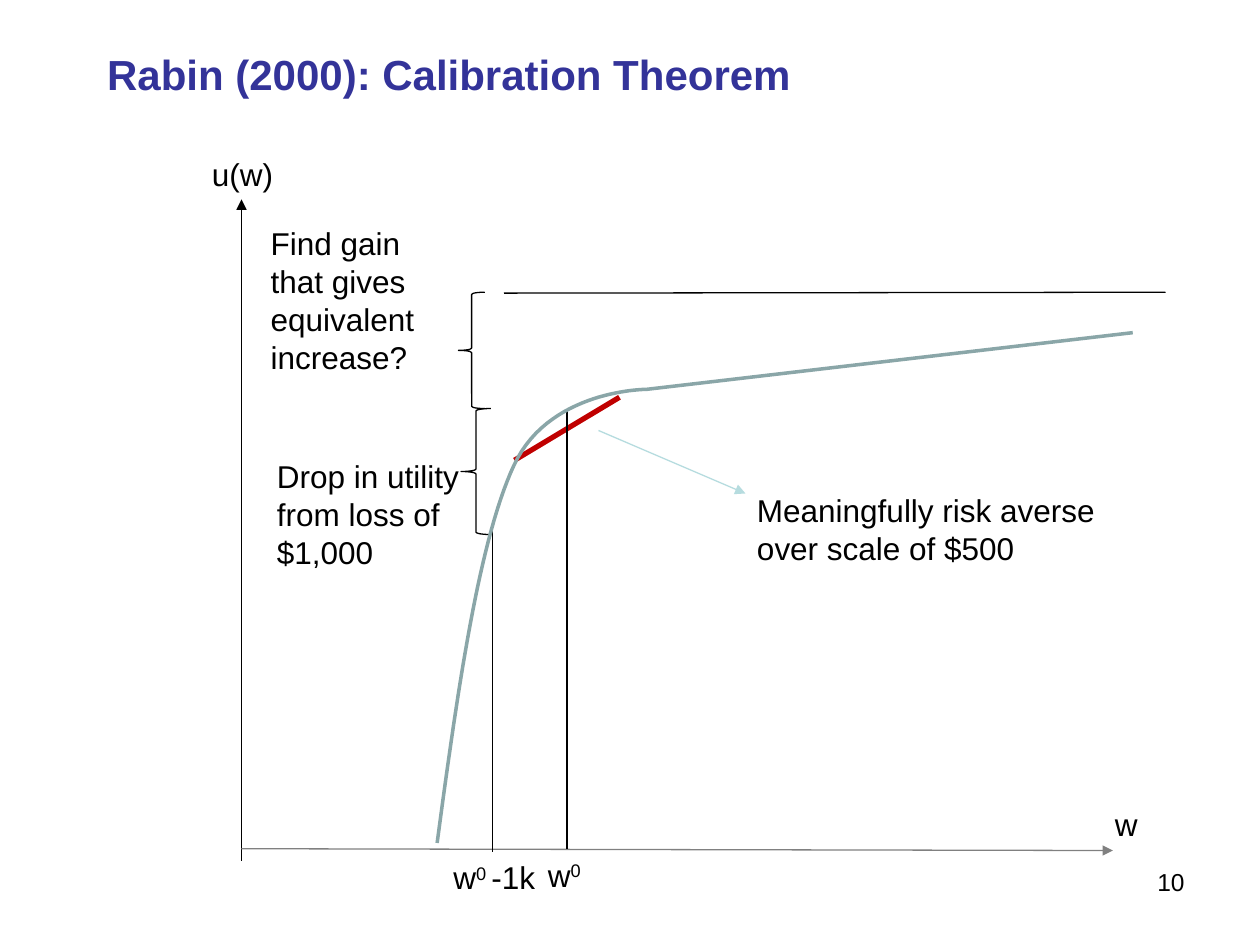
from lxml import etree
from pptx import Presentation
from pptx import util as u
from pptx.dml.color import RGBColor
from pptx.enum import shapes, text
from pptx.oxml import ns

COLORS = {
    "ink": "000000", "title": "333399", "axis": "808080",
    "chord": "C00000", "pointer": "B6DCDF", "curve": "8AA6A8",
}
FONT = "Arial"
TITLE = ("Rabin (2000): Calibration Theorem", (54, 24, 630, 90))
BODY = {"size": 18, "color": "ink"}

LABELS = [
    (["u(w)"], (114, 85, 108, 29), BODY),
    (["w"], (630, 456.5, 90, 29), BODY),
    (["w", "^0"], (306, 485.5, 108, 29), BODY),
    (["w", "^0 ", "-1k"], (252, 487, 108, 29), BODY),
    (["Drop in utility from loss of $1,000"], (151.2, 257.8, 120.2, 72.7), BODY),
    (["Meaningfully risk averse over scale of $500"], (425.5, 277.2, 228.2, 51), BODY),
    (["Find gain that gives equivalent increase?"], (147.6, 124.6, 120.2, 94.3), BODY),
    (["10"], (516, 492, 168, 37.4), {"size": 14, "color": "ink", "align": text.PP_ALIGN.RIGHT}),
]

LINES = [
    ((354, 227), (294, 263), "chord", 3, False),
    ((138, 492), (138, 114), "ink", 0.75, True),
    ((138, 485), (636, 486), "axis", 0.75, True),
    ((324, 234), (324, 485), "ink", 0.75, False),
    ((281.5, 302), (281.5, 487), "ink", 0.75, False),
    ((288, 167.5), (666, 167), "ink", 0.75, False),
    ((342, 246), (426, 282), "pointer", 0.75, True),
]

BRACES = [(263.5, 233.5, 17, 72), (262, 167, 15, 66.5)]

CURVE_START = (249.8, 481.7)
CURVE_BENDS = [
    ((261.4, 395.3), (273.6, 308.9), (293.8, 265.7)),
    ((313.9, 222.5), (369.4, 222.5), (369.4, 222.5)),
]
CURVE_END = (647.3, 190.1)
STEPS = 30


def points(values):
    return [u.Pt(value) for value in values]


def rgb(name):
    return RGBColor.from_string(COLORS[name])


def style_line(shape, color, width):
    shape.line.color.rgb = rgb(color)
    shape.line.width = u.Pt(width)


def write(shape, runs, size, color, align=text.PP_ALIGN.LEFT, bold=False):
    frame = shape.text_frame
    frame_format = {
        "word_wrap": True, "auto_size": text.MSO_AUTO_SIZE.NONE,
        "vertical_anchor": text.MSO_ANCHOR.TOP,
    }
    for name, value in frame_format.items():
        setattr(frame, name, value)
    paragraph = frame.paragraphs[0]
    paragraph.alignment = align
    for content in runs:
        run = paragraph.add_run()
        run.text = content.lstrip("^")
        for name, value in {"name": FONT, "size": u.Pt(size), "bold": bold}.items():
            setattr(run.font, name, value)
        run.font.color.rgb = rgb(color)
        if content.startswith("^"):
            run.font._element.set("baseline", "30000")


def add_line(slide, start, end, color, width, arrow):
    connector = slide.shapes.add_connector(
        shapes.MSO_CONNECTOR.STRAIGHT, *points(start + end))
    style_line(connector, color, width)
    if arrow:
        tail = etree.SubElement(connector.line._get_or_add_ln(), ns.qn("a:tailEnd"))
        tail.set("type", "triangle")
    etree.SubElement(connector._element.spPr, ns.qn("a:effectLst"))


def add_brace(slide, box):
    brace = slide.shapes.add_shape(shapes.MSO_SHAPE.LEFT_BRACE, *points(box))
    brace.shadow.inherit = False
    brace.fill.background()
    style_line(brace, "ink", 0.75)


def bend_points(start, bend):
    corners = (start, *bend)
    for step in range(1, STEPS + 1):
        t = step / STEPS
        weights = ((1 - t) ** 3, 3 * t * (1 - t) ** 2, 3 * t ** 2 * (1 - t), t ** 3)
        yield tuple(sum(weight * corner[axis] for weight, corner in zip(weights, corners))
                    for axis in (0, 1))


def add_curve(slide):
    vertices = []
    start = CURVE_START
    for bend in CURVE_BENDS:
        vertices.extend(bend_points(start, bend))
        start = bend[-1]
    vertices.append(CURVE_END)
    builder = slide.shapes.build_freeform(*points(CURVE_START))
    builder.add_line_segments([points(vertex) for vertex in vertices], close=False)
    curve = builder.convert_to_shape()
    curve.shadow.inherit = False
    curve.fill.background()
    style_line(curve, "curve", 2)


def main():
    presentation = Presentation()
    presentation.slide_width, presentation.slide_height = points((720, 540))
    slide = presentation.slides.add_slide(presentation.slide_layouts[5])

    title = slide.shapes.title
    content, box = TITLE
    for name, value in zip(("left", "top", "width", "height"), points(box)):
        setattr(title, name, value)
    write(title, [content], 24, "title", bold=True)

    for line in LINES:
        add_line(slide, *line)
    for brace in BRACES:
        add_brace(slide, brace)
    for runs, box, style in LABELS:
        write(slide.shapes.add_textbox(*points(box)), runs, **style)
    add_curve(slide)
    presentation.save("out.pptx")


if __name__ == "__main__":
    main()
